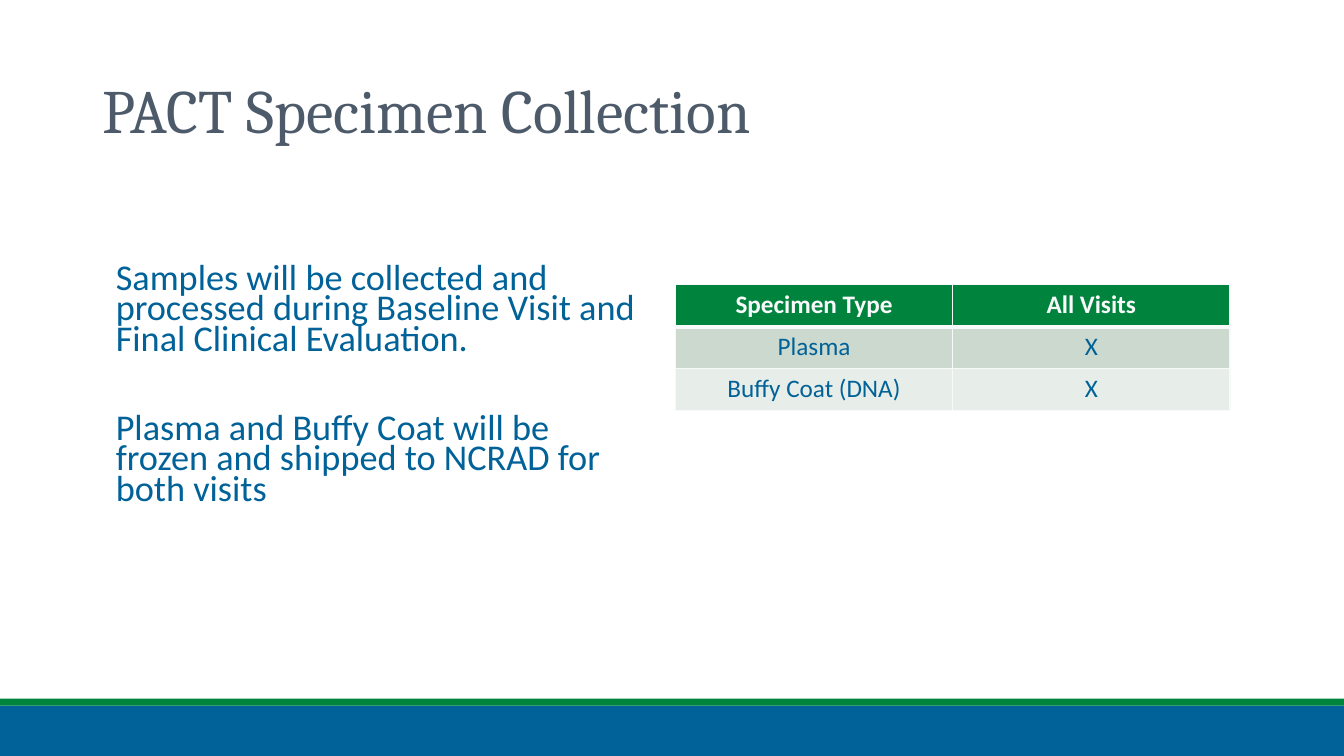
from lxml.etree import SubElement
from pptx import Presentation
from pptx.dml.color import RGBColor
from pptx.enum.shapes import MSO_SHAPE as Shape
from pptx.enum.text import MSO_ANCHOR as Anchor, PP_ALIGN as Align
from pptx.oxml.ns import qn
from pptx.util import Pt

BLUE, GREEN, SLATE, PALE = "006298", "00843D", "4D5A69", "F8F9FA"
BANDS = ["CCD9CE", "E7EDE8"]


def rgb(value):
    return RGBColor.from_string(value)


class SlideBuilder:
    """Holds the text style and the slide being built."""

    def __init__(self, slide, font="Calibri", color=BLUE):
        self.s, self.font, self.color = slide, font, color

    def run(self, p, text, size, color=None, font=None, bold=False):
        r = p.add_run()
        r.text = text
        r.font.name = font or self.font
        r.font.size = Pt(size)
        r.font.bold = bold
        r.font.color.rgb = rgb(color or self.color)

    def bar(self, x, y, w, h, fill):
        sp = self.s.shapes.add_shape(Shape.RECTANGLE, Pt(x), Pt(y), Pt(w), Pt(h))
        sp.shadow.inherit = False
        sp.fill.solid()
        sp.fill.fore_color.rgb = rgb(fill)
        sp.line.fill.background()

    def text(self, x, y, w, h, paragraphs, size, spacing, gap=0,
             anchor=Anchor.TOP, **style):
        tf = self.s.shapes.add_textbox(Pt(x), Pt(y), Pt(w), Pt(h)).text_frame
        tf.word_wrap = True
        tf.vertical_anchor = anchor
        for i, line in enumerate(paragraphs):
            p = tf.add_paragraph() if i else tf.paragraphs[0]
            p.line_spacing = spacing
            p.space_before = Pt(gap if i else 0)
            self.run(p, line, size, **style)

    def border(self, cell, side, width):
        ln = SubElement(cell._tc.get_or_add_tcPr(), qn(f"a:ln{side}"), w=str(Pt(width)))
        fill = SubElement(ln, qn("a:solidFill"))
        SubElement(fill, qn("a:srgbClr"), val=PALE)

    def table(self, x, y, col_w, row_h, rows, size):
        n, m = len(rows), len(rows[0])
        t = self.s.shapes.add_table(n, m, Pt(x), Pt(y), Pt(col_w * m), Pt(row_h * n)).table
        for col in t.columns:
            col.width = Pt(col_w)
        for i, row in enumerate(rows):
            t.rows[i].height = Pt(row_h)
            head = i == 0
            for j, value in enumerate(row):
                cell = t.cell(i, j)
                for side in "LRTB":
                    thick = (head and side == "B") or (i == 1 and side == "T")
                    self.border(cell, side, 3 if thick else 1)
                cell.fill.solid()
                cell.fill.fore_color.rgb = rgb(GREEN if head else BANDS[(i - 1) % 2])
                p = cell.text_frame.paragraphs[0]
                p.alignment = Align.CENTER
                self.run(p, value, size, PALE if head else BLUE, bold=head)


def main():
    prs = Presentation()
    prs.slide_width, prs.slide_height = Pt(960), Pt(540)
    b = SlideBuilder(prs.slides.add_slide(prs.slide_layouts[6]))
    b.bar(0, 504, 960, 36, BLUE)
    b.bar(0, 499, 960, 5, GREEN)
    b.text(66, 28.75, 828, 104.4, ["PACT Specimen Collection"], 44, 0.9,
           anchor=Anchor.MIDDLE, color=SLATE, font="Cambria")
    b.text(75.6, 186.5, 394, 198, [
        "Samples will be collected and processed during Baseline Visit and "
        "Final Clinical Evaluation.",
        "Plasma and Buffy Coat will be frozen and shipped to NCRAD for both visits",
    ], 25.9, 0.7, gap=41.7)
    b.table(482.5, 203.5, 198, 30, [
        ["Specimen Type", "All Visits"],
        ["Plasma", "X"],
        ["Buffy Coat (DNA)", "X"],
    ], 18)
    prs.save("out.pptx")


if __name__ == "__main__":
    main()
